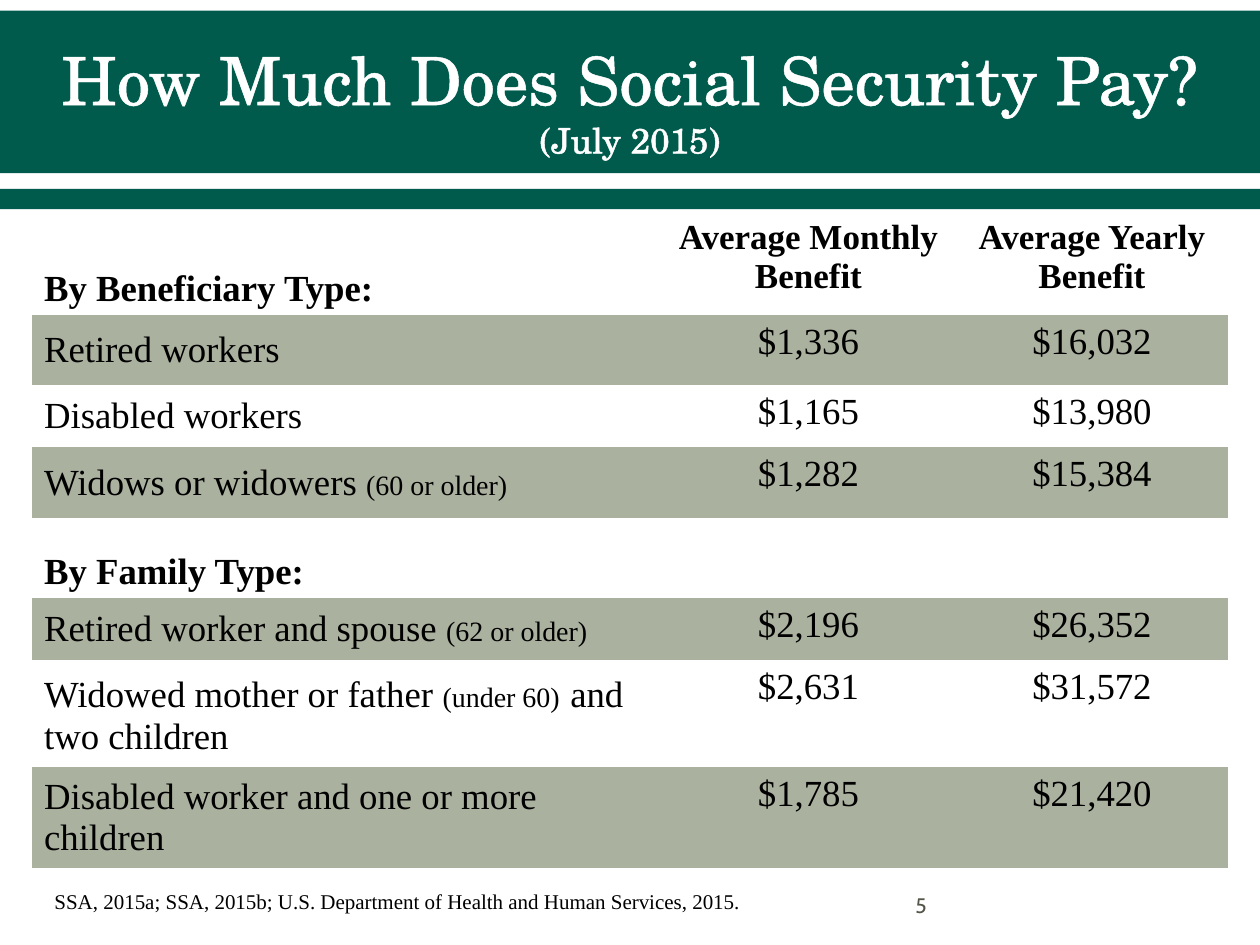
from lxml.etree import SubElement as Sub
from pptx import Presentation
from pptx.dml.color import RGBColor as RGB
from pptx.enum.shapes import MSO_SHAPE as Shape
from pptx.enum.text import MSO_ANCHOR as Anchor, PP_ALIGN as Align
from pptx.oxml import parse_xml
from pptx.oxml.ns import nsdecls, qn
from pptx.util import Pt

HUES = {"green": "005B4D", "sage": "ABB19F", "white": "FFFFFF",
        "black": "000000", "gray": "55554A"}
SERIF, HEAD, SANS = "Times New Roman", "TeX Gyre Schola", "Cabin"
BARE = "{2D5ABB26-0587-4C30-8999-92F81FD0307C}"
COLS = [360, 168, 156]
ROWS = [
    (66.24, [("By Beneficiary Type:", 21)], "Average Monthly Benefit", "Average Yearly Benefit"),
    (40, [("Retired workers", 21)], "$1,336", "$16,032"),
    (35.4, [("Disabled workers", 21)], "$1,165", "$13,980"),
    (40.6, [("Widows or widowers ", 21), ("(60 or older)", 16)], "$1,282", "$15,384"),
    (45.72, [("By Family Type:", 21)], "", ""),
    (35.4, [("Retired worker and spouse ", 21), ("(62 or older)", 16)], "$2,196", "$26,352"),
    (61.14, [("Widowed mother or father ", 21), ("(under 60)", 16), (" ", 24),
             ("and two children", 21)], "$2,631", "$31,572"),
    (57.5, [("Disabled worker and one or more children", 21)], "$1,785", "$21,420"),
]
HEADS, BANDS = (0, 4), (1, 3, 5, 7)


class Deck:
    """Holds the style and the current slide, with a method per element."""

    def __init__(self):
        self.prs = Presentation()
        self.prs.slide_width, self.prs.slide_height = Pt(720), Pt(540)
        self.slide = self.prs.slides.add_slide(self.prs.slide_layouts[5])
        self.shapes = self.slide.shapes

    def font(self, run, size, face=SERIF, hue="black", bold=False):
        font = run.font
        font.size, font.name, font.bold = Pt(size), face, bold
        font.color.rgb = RGB.from_string(HUES[hue])

    def bar(self, top, high):
        bar = self.shapes.add_shape(Shape.RECTANGLE, 0, Pt(top), Pt(720), Pt(high))
        bar.shadow.inherit = False
        bar.fill.solid()
        bar.fill.fore_color.rgb = RGB.from_string(HUES["green"])
        bar.line.fill.background()

    def title(self, text, sizes):
        box = self.shapes.title
        box.left, box.top, box.width, box.height = 0, Pt(18), Pt(720), Pt(77.76)
        frame = box.text_frame
        frame.text = text
        frame.vertical_anchor = Anchor.MIDDLE
        para = frame.paragraphs[0]
        para.alignment = Align.CENTER
        for run, size in zip(para.runs, sizes):
            self.font(run, size, HEAD, "white")
            edge = parse_xml(f'<a:ln {nsdecls("a")} w="{Pt(1.1)}"/>')
            fill = Sub(edge, qn("a:solidFill"))
            Sub(fill, qn("a:srgbClr"), val=HUES["white"])
            run.font._element.insert(0, edge)
        self.shapes._spTree.append(box._element)

    def label(self, text, left, wide, high, face, hue, anchor):
        box = self.shapes.add_textbox(Pt(left), Pt(504), Pt(wide), Pt(high))
        frame = box.text_frame
        frame.word_wrap = True
        frame.vertical_anchor = anchor
        frame.text = text
        self.font(frame.paragraphs[0].runs[0], 12, face, hue)

    def cell(self, cell, parts, align, anchor, bold, band):
        cell.vertical_anchor = anchor
        if band:
            cell.fill.solid()
            cell.fill.fore_color.rgb = RGB.from_string(HUES["sage"])
        else:
            cell.fill.background()
        para = cell.text_frame.paragraphs[0]
        para.alignment = align
        for text, size in parts:
            run = para.add_run()
            run.text = text
            self.font(run, size, bold=bold)

    def table(self, left, top):
        high = sum(row[0] for row in ROWS)
        grid = self.shapes.add_table(len(ROWS), len(COLS), Pt(left), Pt(top),
                                     Pt(sum(COLS)), Pt(high)).table
        grid.first_row = grid.horz_banding = False
        grid._tbl.tblPr.find(qn("a:tableStyleId")).text = BARE
        for col, wide in zip(grid.columns, COLS):
            col.width = Pt(wide)
        for i, (tall, name, *sums) in enumerate(ROWS):
            grid.rows[i].height = Pt(tall)
            bold, band = i in HEADS, i in BANDS
            self.cell(grid.cell(i, 0), name, Align.LEFT,
                      Anchor.BOTTOM if bold else Anchor.MIDDLE, bold, band)
            for j, text in enumerate(sums, 1):
                parts = [(text, 20 if bold else 21)] if text else []
                self.cell(grid.cell(i, j), parts, Align.CENTER,
                          Anchor.MIDDLE if bold else Anchor.TOP, bold, band)


def main():
    deck = Deck()
    deck.bar(6, 92.9)
    deck.bar(108, 11.5)
    deck.title("How Much Does Social Security Pay?\v(July 2015)", (38, 20))
    deck.label("5", 516, 138, 26, SANS, "gray", Anchor.MIDDLE)
    deck.label("SSA, 2015a; SSA, 2015b; U.S. Department of Health and Human Services, 2015.",
               24, 414, 21.6, SERIF, "black", Anchor.TOP)
    deck.table(18, 114)
    deck.prs.save("out.pptx")


if __name__ == "__main__":
    main()
